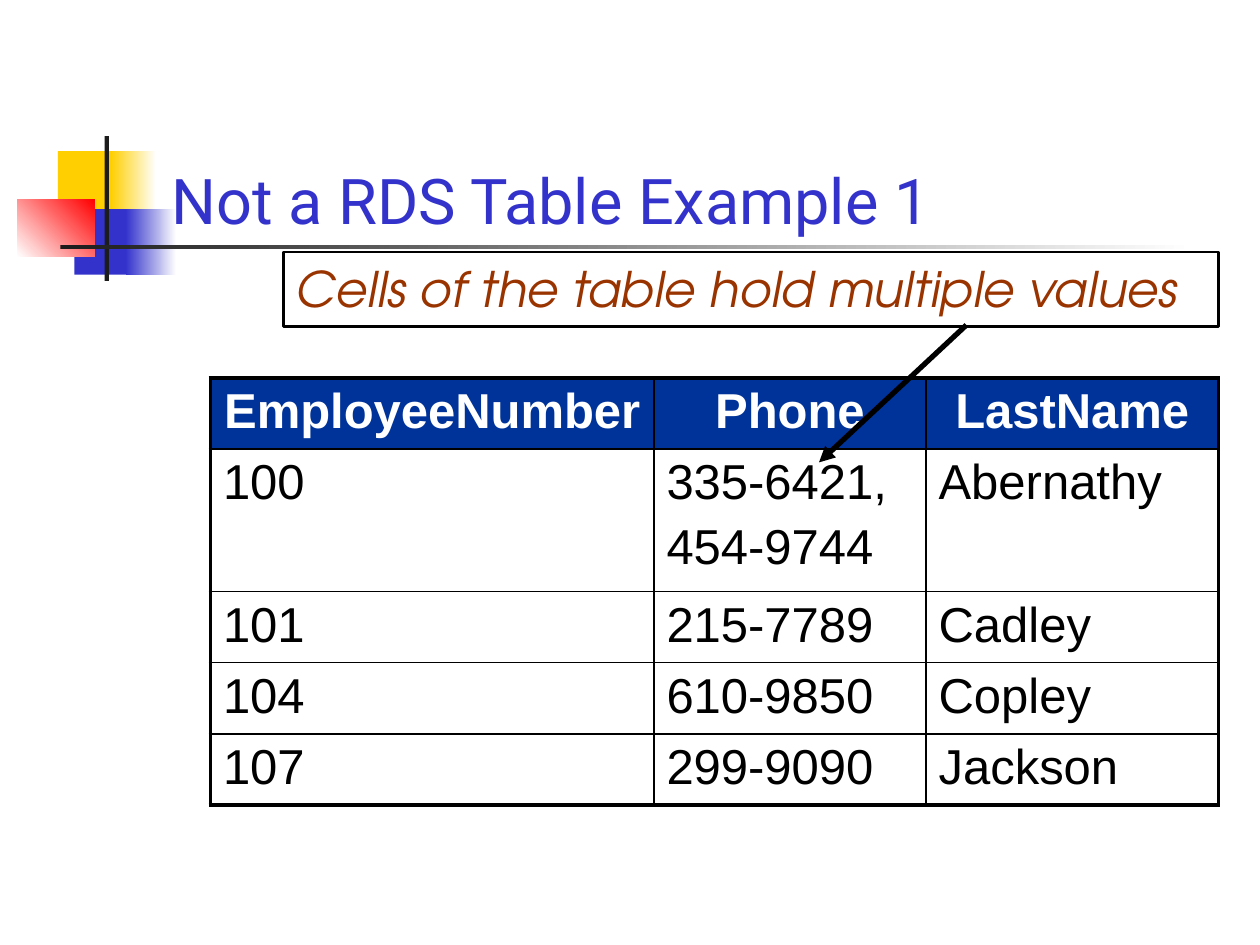
from dataclasses import dataclass

from lxml import etree
from pptx import Presentation
from pptx.dml.color import RGBColor
from pptx.enum.shapes import MSO_CONNECTOR, MSO_SHAPE
from pptx.enum.text import MSO_ANCHOR, MSO_AUTO_SIZE, PP_ALIGN
from pptx.oxml.ns import qn
from pptx.util import Inches, Pt

RECTANGLE = MSO_SHAPE.RECTANGLE
STRAIGHT = MSO_CONNECTOR.STRAIGHT
TOP, BOTTOM = MSO_ANCHOR.TOP, MSO_ANCHOR.BOTTOM
LEFT, CENTER = PP_ALIGN.LEFT, PP_ALIGN.CENTER
GROW = MSO_AUTO_SIZE.SHAPE_TO_FIT_TEXT

SLIDE_W, SLIDE_H = Inches(10), Inches(7.5)
COLUMNS, ROWS = 100, 75


@dataclass(frozen=True)
class Theme:
    white: str = "FFFFFF"
    black: str = "000000"
    yellow: str = "FFCF01"
    blue: str = "3333CC"
    red: str = "FF0000"
    charcoal: str = "1C1C1C"
    header: str = "003399"
    callout: str = "993300"
    title_font: str = "Roboto"
    callout_font: str = "TeX Gyre Adventor"
    table_font: str = "Arial"
    title_size: float = 36
    body_size: float = 28
    paragraph_gap: float = 5.6
    thin: float = 1
    outline: float = 1.5
    frame: float = 2.25
    arrow: float = 3


THEME = Theme()


@dataclass(frozen=True)
class Box:
    column: float
    row: float
    columns: float
    rows: float

    def place(self) -> tuple[int, int, int, int]:
        return across(self.column), down(self.row), across(self.columns), down(self.rows)


@dataclass(frozen=True)
class Block:
    box: Box
    start: str
    end: str = ""
    angle: float = 0


MOTIF = [
    Block(Box(4.6, 12, 4.8, 5.2), THEME.yellow),
    Block(Box(8.8, 12, 3.6, 5.2), THEME.yellow, THEME.white),
    Block(Box(5.9, 16.6, 4.6, 5.2), THEME.blue),
    Block(Box(10, 16.6, 4, 5.2), THEME.blue, THEME.white),
    Block(Box(1.4, 15.8, 6.1, 4.6), THEME.white, THEME.red, 45),
    Block(Box(8.3, 10.8, 0.35, 11.5), THEME.charcoal),
    Block(Box(4.8, 19.45, 90, 0.35), THEME.charcoal, THEME.white),
]
TITLE_BOX = Box(12.6, 6.8, 85.2, 12.5)
CALLOUT_BOX = Box(22.5, 20, 74.2, 5.9)
ARROW_START, ARROW_END = (76.7, 25.8), (65, 36.7)
TABLE_BOX = Box(16.7, 30, 80, 33.9)
TABLE_COLUMNS = [35.2, 21.6, 23.2]
TABLE_ROWS = [5.65, 11.3, 5.65, 5.65, 5.65]
EMPLOYEES = [
    ("EmployeeNumber", "Phone", "LastName"),
    ("100", "335-6421,\n454-9744", "Abernathy"),
    ("101", "215-7789", "Cadley"),
    ("104", "610-9850", "Copley"),
    ("107", "299-9090", "Jackson"),
]


def across(columns: float) -> int:
    return round(SLIDE_W * columns / COLUMNS)


def down(rows: float) -> int:
    return round(SLIDE_H * rows / ROWS)


def rgb(color: str) -> RGBColor:
    return RGBColor.from_string(color)


def write(frame, text: str, *, font: str, size: float, color: str, bold: bool = False,
          italic: bool = False, align=LEFT, gap: float = 0) -> None:
    for index, line in enumerate(text.split("\n")):
        paragraph = frame.add_paragraph() if index else frame.paragraphs[0]
        paragraph.alignment = align
        paragraph.space_before = Pt(gap if index else 0)
        run = paragraph.add_run()
        run.text = line
        run.font.name, run.font.size = font, Pt(size)
        run.font.bold, run.font.italic = bold, italic
        run.font.color.rgb = rgb(color)


def draw_block(slide, block: Block) -> None:
    shape = slide.shapes.add_shape(RECTANGLE, *block.box.place())
    shape.shadow.inherit = False
    shape.line.fill.background()
    if block.end:
        shape.fill.gradient()
        shape.fill.gradient_angle = block.angle
        for stop, color, position in zip(shape.fill.gradient_stops,
                                         (block.start, block.end), (0, 1)):
            stop.color.rgb = rgb(color)
            stop.position = position
    else:
        shape.fill.solid()
        shape.fill.fore_color.rgb = rgb(block.start)


def draw_title(slide, text: str) -> None:
    title = slide.shapes.title
    title.left, title.top, title.width, title.height = TITLE_BOX.place()
    frame = title.text_frame
    frame.word_wrap = True
    frame.auto_size = MSO_AUTO_SIZE.NONE
    frame.vertical_anchor = BOTTOM
    write(frame, text, font=THEME.title_font, size=THEME.title_size, color=THEME.blue)
    title.element.getparent().append(title.element)


def set_border(cell, side: str, width: float) -> None:
    properties = cell._tc.get_or_add_tcPr()
    line = etree.SubElement(properties, qn(f"a:ln{side}"), w=str(Pt(width)))
    fill = etree.SubElement(line, qn("a:solidFill"))
    etree.SubElement(fill, qn("a:srgbClr"), val=THEME.black)


def draw_table(slide) -> None:
    last_row, last_column = len(TABLE_ROWS) - 1, len(TABLE_COLUMNS) - 1
    table = slide.shapes.add_table(last_row + 1, last_column + 1, *TABLE_BOX.place()).table
    table.first_row = table.horz_banding = False
    for column, width in zip(table.columns, TABLE_COLUMNS):
        column.width = across(width)
    for row, height in zip(table.rows, TABLE_ROWS):
        row.height = down(height)
    for r, values in enumerate(EMPLOYEES):
        heading = r == 0
        for c, value in enumerate(values):
            cell = table.cell(r, c)
            edges = {"L": c == 0, "R": c == last_column, "T": heading, "B": r == last_row}
            for side, outer in edges.items():
                set_border(cell, side, THEME.frame if outer else THEME.thin)
            if heading:
                cell.fill.solid()
                cell.fill.fore_color.rgb = rgb(THEME.header)
            else:
                cell.fill.background()
            write(cell.text_frame, value, font=THEME.table_font, size=THEME.body_size,
                  color=THEME.white if heading else THEME.black, bold=heading,
                  align=CENTER if heading else LEFT, gap=THEME.paragraph_gap)


def draw_callout(slide, text: str) -> None:
    callout = slide.shapes.add_shape(RECTANGLE, *CALLOUT_BOX.place())
    callout.shadow.inherit = False
    callout.fill.background()
    callout.line.color.rgb = rgb(THEME.black)
    callout.line.width = Pt(THEME.outline)
    frame = callout.text_frame
    frame.word_wrap = True
    frame.auto_size = GROW
    frame.vertical_anchor = TOP
    write(frame, text, font=THEME.callout_font, size=THEME.body_size,
          color=THEME.callout, italic=True)


def draw_arrow(slide, start: tuple[float, float], end: tuple[float, float]) -> None:
    arrow = slide.shapes.add_connector(STRAIGHT, across(start[0]), down(start[1]),
                                       across(end[0]), down(end[1]))
    arrow.line.color.rgb = rgb(THEME.black)
    arrow.line.width = Pt(THEME.arrow)
    etree.SubElement(arrow.line._get_or_add_ln(), qn("a:tailEnd"), type="triangle")
    etree.SubElement(arrow.element.spPr, qn("a:effectLst"))


def main() -> None:
    deck = Presentation()
    deck.slide_width, deck.slide_height = SLIDE_W, SLIDE_H
    slide = deck.slides.add_slide(deck.slide_layouts[5])
    for block in MOTIF:
        draw_block(slide, block)
    draw_title(slide, "Not a RDS Table Example 1")
    draw_table(slide)
    draw_callout(slide, "Cells of the table hold multiple values")
    draw_arrow(slide, ARROW_START, ARROW_END)
    deck.save("out.pptx")


if __name__ == "__main__":
    main()
